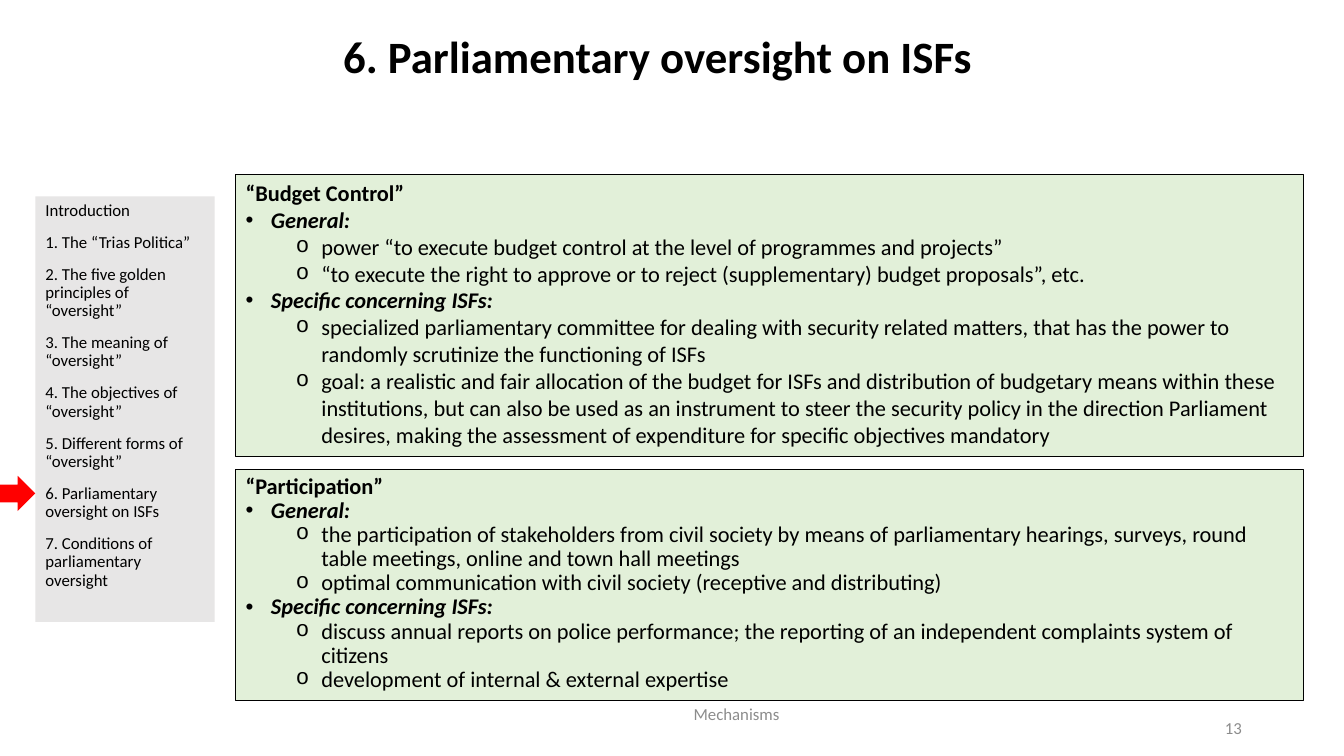
import lxml.etree
import pptx
import pptx.dml.color
import pptx.enum.shapes
import pptx.enum.text
import pptx.oxml.ns
import pptx.util

Cm = pptx.util.Cm
Pt = pptx.util.Pt
qn = pptx.oxml.ns.qn
ALIGN = pptx.enum.text.PP_ALIGN
ANCHOR = pptx.enum.text.MSO_ANCHOR
SHAPE = pptx.enum.shapes.MSO_SHAPE

COLORS = {"text": "000000", "muted": "8C8C8C", "sidebar": "E7E6E6",
          "panel": "E2F0D9", "arrow": "FF0000"}
FONT = "Calibri"
# Bullet character, its font and the left indent in cm for each level
BULLETS = [("•", "Arial", 0.64), ("o", "Courier New", 1.91)]
HANGING = 0.64

TITLE = "6. Parliamentary oversight on ISFs"
CHAPTERS = [
    "Introduction",
    "1. The “Trias Politica”",
    "2. The five golden principles of “oversight”",
    "3. The meaning of “oversight”",
    "4. The objectives of “oversight”",
    "5. Different forms of “oversight”",
    "6. Parliamentary oversight on ISFs",
    "7. Conditions of parliamentary oversight",
]
BUDGET = [
    ("General:", [
        "power “to execute budget control at the level of programmes and projects”",
        "“to execute the right to approve or to reject (supplementary) budget proposals”, etc.",
    ]),
    ("Specific concerning ISFs:", [
        "specialized parliamentary committee for dealing with security related matters, "
        "that has the power to randomly scrutinize the functioning of ISFs",
        "goal: a realistic and fair allocation of the budget for ISFs and distribution of "
        "budgetary means within these institutions, but can also be used as an instrument "
        "to steer the security policy in the direction Parliament desires, making the "
        "assessment of expenditure for specific objectives mandatory",
    ]),
]
PARTICIPATION = [
    ("General:", [
        "the participation of stakeholders from civil society by means of parliamentary "
        "hearings, surveys, round table meetings, online and town hall meetings",
        "optimal communication with civil society (receptive and distributing)",
    ]),
    ("Specific concerning ISFs:", [
        "discuss annual reports on police performance; the reporting of an independent "
        "complaints system of citizens",
        "development of internal & external expertise",
    ]),
]


def rgb(name):
    return pptx.dml.color.RGBColor.from_string(COLORS[name])


def place(sp, left, top, width, height):
    sp.left, sp.top, sp.width, sp.height = Cm(left), Cm(top), Cm(width), Cm(height)


def setup_frame(sp, anchor=ANCHOR.TOP):
    tf = sp.text_frame
    tf.word_wrap = True
    tf.auto_size = pptx.enum.text.MSO_AUTO_SIZE.NONE
    tf.vertical_anchor = anchor
    return tf


def add_text(tf, text, size=16, color="text", bold=False, italic=False,
             align=ALIGN.LEFT, spacing=1.0, before=0, level=None):
    """Fill the empty first paragraph, or append one; level picks a bullet."""
    first = not tf.paragraphs[0].runs
    p = tf.paragraphs[0] if first else tf.add_paragraph()
    pPr = p._p.get_or_add_pPr()
    if level is None:
        pPr.set("marL", "0")
        pPr.set("indent", "0")
        lxml.etree.SubElement(pPr, qn("a:buNone"))
    else:
        char, typeface, indent = BULLETS[level]
        p.level = level
        pPr.set("marL", str(Cm(indent)))
        pPr.set("indent", str(-Cm(HANGING)))
        lxml.etree.SubElement(pPr, qn("a:buFont")).set("typeface", typeface)
        lxml.etree.SubElement(pPr, qn("a:buChar")).set("char", char)
    p.alignment = align
    p.line_spacing = spacing
    p.space_before = Pt(0 if first else before)
    r = p.add_run()
    r.text = text
    r.font.name, r.font.size = FONT, Pt(size)
    r.font.bold, r.font.italic = bold, italic
    r.font.color.rgb = rgb(color)


def add_box(slide, kind, box, fill, line=None):
    sp = slide.shapes.add_shape(kind, *map(Cm, box))
    sp.shadow.inherit = False
    sp.fill.solid()
    sp.fill.fore_color.rgb = rgb(fill)
    if line:
        sp.line.color.rgb = rgb(line)
        sp.line.width = Pt(0.75)
    else:
        sp.line.fill.background()
    return sp


def build_title(slide, box):
    sp = slide.shapes.title
    place(sp, *box)
    add_text(setup_frame(sp), TITLE, size=32, bold=True, align=ALIGN.CENTER, spacing=0.9)


def build_sidebar(slide, box):
    left, top, width, height = box
    sp = slide.placeholders[1]
    place(sp, *box)
    sp.fill.solid()
    sp.fill.fore_color.rgb = rgb("sidebar")
    tf = setup_frame(sp)
    for chapter in CHAPTERS:
        add_text(tf, chapter, size=12, spacing=0.9, before=10)
    # Marker that points at the current chapter
    arrow_w, arrow_h = 1.17, 0.89
    add_box(slide, SHAPE.RIGHT_ARROW, (left - arrow_w, top + 7.04, arrow_w, arrow_h), "arrow")


def build_panel(slide, box, heading, groups, spacing=1.0):
    tf = setup_frame(add_box(slide, SHAPE.RECTANGLE, box, "panel", line="text"))
    add_text(tf, heading, bold=True, spacing=spacing)
    for label, points in groups:
        add_text(tf, label, bold=True, italic=True, spacing=spacing, level=0)
        for point in points:
            add_text(tf, point, spacing=spacing, level=1)


def build_footer_text(slide, box, text, align):
    sp = slide.shapes.add_textbox(*map(Cm, box))
    add_text(setup_frame(sp, ANCHOR.MIDDLE), text, size=12, color="muted", align=align)


def main():
    prs = pptx.Presentation()
    prs.slide_width, prs.slide_height = Cm(33.87), Cm(19.05)
    slide = prs.slides.add_slide(prs.slide_layouts[1])

    # Footer
    build_footer_text(slide, (12.85, 17.65, 11.43, 0.66), "Mechanisms", ALIGN.CENTER)
    build_footer_text(slide, (23.93, 17.82, 7.62, 1.02), "13", ALIGN.RIGHT)

    # Title and chapter list
    build_title(slide, (7.62, 0.76, 17.91, 3.18))
    build_sidebar(slide, (0.89, 4.95, 4.52, 10.72))

    # Content panels
    left, width = 5.94, 26.92
    build_panel(slide, (left, 4.39, width, 7.11), "“Budget Control”", BUDGET)
    build_panel(slide, (left, 11.84, width, 5.82), "“Participation”", PARTICIPATION, spacing=0.9)

    prs.save("out.pptx")


if __name__ == "__main__":
    main()
